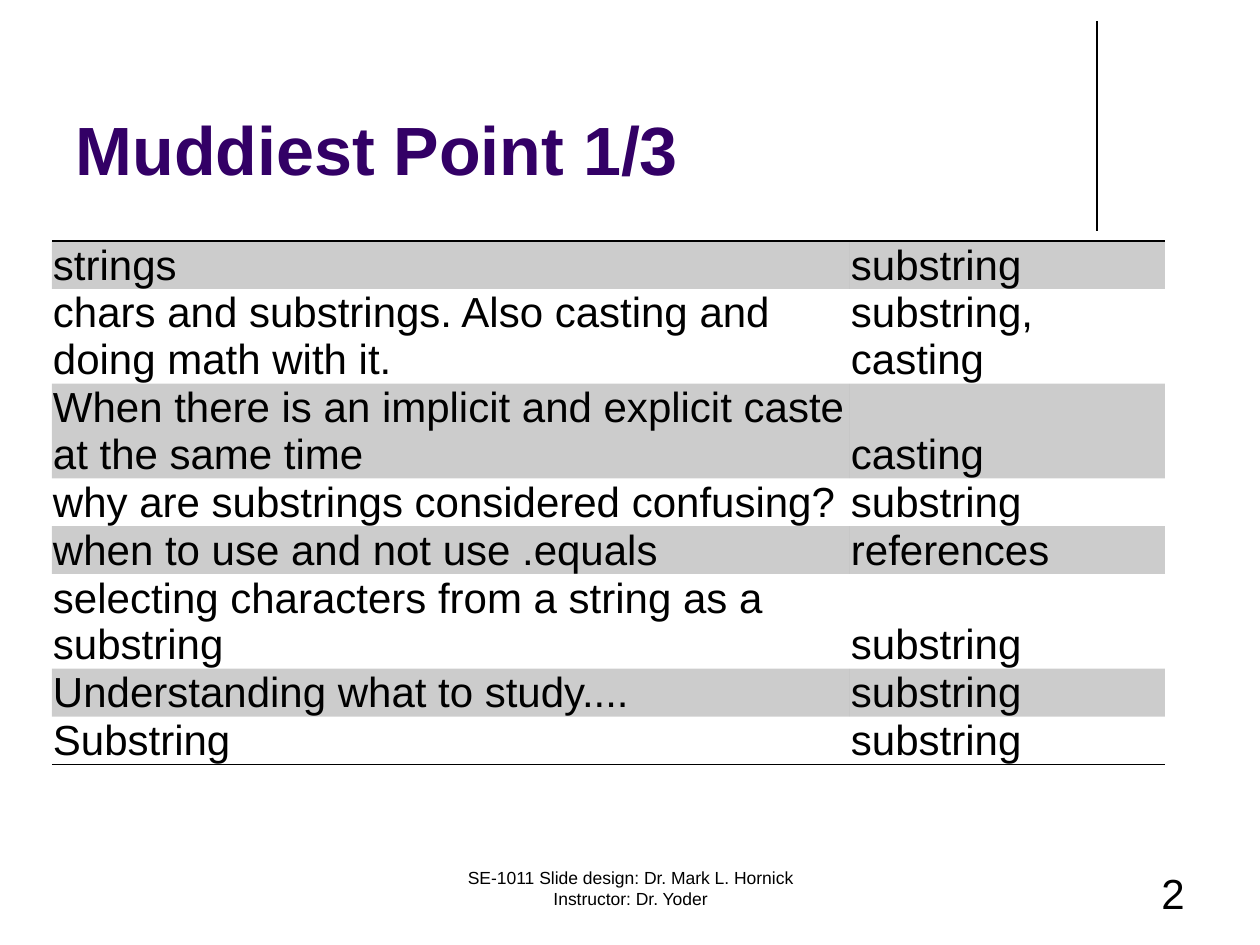
from dataclasses import dataclass

from lxml.etree import SubElement
from pptx import Presentation
from pptx.dml.color import RGBColor
from pptx.enum.shapes import MSO_CONNECTOR
from pptx.enum.text import MSO_ANCHOR, MSO_AUTO_SIZE, PP_ALIGN
from pptx.oxml import parse_xml
from pptx.oxml.ns import nsdecls, qn
from pptx.util import Emu, Pt

PX = 914400 // 126  # one pixel in EMU


@dataclass(frozen=True)
class Theme:
    font: str = "Arial"
    ink: str = "000000"
    title_ink: str = "330066"
    title_size: int = 39
    body_size: int = 24
    footer_size: int = 10
    band_alpha: int = 20
    rule_width: float = 0.75
    table_rule: int = 1


def px(*lengths):
    return [Emu(length * PX) for length in lengths]


class SlideBuilder:
    def __init__(self, slide, theme):
        self.slide = slide
        self.theme = theme

    def style(self, paragraph, size, color=None, bold=False, align=PP_ALIGN.LEFT):
        paragraph.alignment = align
        font = paragraph.font
        font.name, font.size, font.bold = self.theme.font, Pt(size), bold
        font.color.rgb = RGBColor.from_string(color or self.theme.ink)

    def title(self, text, left, top, width, height):
        title = self.slide.shapes.title
        title.left, title.top, title.width, title.height = px(left, top, width, height)
        frame = title.text_frame
        frame.text = text
        frame.auto_size = MSO_AUTO_SIZE.NONE
        frame.vertical_anchor = MSO_ANCHOR.BOTTOM
        self.style(frame.paragraphs[0], self.theme.title_size, self.theme.title_ink, bold=True)

    def text(self, text, left, top, width, height, size, align):
        frame = self.slide.shapes.add_textbox(*px(left, top, width, height)).text_frame
        frame.word_wrap = True
        frame.text = text
        self.style(frame.paragraphs[0], size, align=align)

    def rule(self, x1, y1, x2, y2):
        rule = self.slide.shapes.add_connector(MSO_CONNECTOR.STRAIGHT, *px(x1, y1, x2, y2))
        rule.line.color.rgb = RGBColor.from_string(self.theme.ink)
        rule.line.width = Pt(self.theme.rule_width)
        SubElement(rule._element.spPr, qn("a:effectLst"))

    def table(self, rows, left, top, column_widths, height, row_height):
        frame = self.slide.shapes.add_table(
            len(rows), len(column_widths), *px(left, top, sum(column_widths), height))
        table = frame.table
        table.first_row = table.horz_banding = False
        for column, width in zip(table.columns, px(*column_widths)):
            column.width = width
        for index, texts in enumerate(rows):
            table.rows[index].height = Emu(row_height * PX)
            ruled = {"T": index == 0, "B": index == len(rows) - 1}
            for cell, text in zip(table.rows[index].cells, texts):
                self.cell(cell, text, index % 2 == 0, ruled)
        frame.height = Emu(height * PX)

    def cell(self, cell, text, banded, ruled):
        cell.text = text
        cell.vertical_anchor = MSO_ANCHOR.BOTTOM
        cell.margin_left, cell.margin_right, cell.margin_top, cell.margin_bottom = px(1, 1, 1, 0)
        self.style(cell.text_frame.paragraphs[0], self.theme.body_size)
        properties = cell._tc.get_or_add_tcPr()
        if banded:
            cell.fill.solid()
            cell.fill.fore_color.rgb = RGBColor.from_string(self.theme.ink)
            color = properties.find(".//" + qn("a:srgbClr"))
            SubElement(color, qn("a:alpha"), val=str(self.theme.band_alpha * 1000))
        else:
            cell.fill.background()
        # Borders come before the fill in the cell properties
        line = f'<a:solidFill><a:srgbClr val="{self.theme.ink}"/></a:solidFill>'
        for position, side in enumerate("LRTB"):
            paint = line if ruled.get(side) else "<a:noFill/>"
            properties.insert(position, parse_xml(
                f'<a:ln{side} {nsdecls("a")} w="{Pt(self.theme.table_rule)}">{paint}</a:ln{side}>'))


MUDDIEST_POINTS = [
    ("strings", "substring"),
    ("chars and substrings. Also casting and doing math with it.", "substring, casting"),
    ("When there is an implicit and explicit caste at the same time", "casting"),
    ("why are substrings considered confusing?", "substring"),
    ("when to use and not use .equals", "references"),
    ("selecting characters from a string as a substring", "substring"),
    ("Understanding what to study....", "substring"),
    ("Substring", "substring"),
]


def main():
    theme = Theme()
    deck = Presentation()
    deck.slide_width, deck.slide_height = px(1260, 945)
    builder = SlideBuilder(deck.slides.add_slide(deck.slide_layouts[5]), theme)

    # Heading
    builder.rule(1097, 21, 1097, 231)
    builder.title("Muddiest Point 1/3", 63, 16, 1040, 179)

    # Student answers and their topics
    builder.table(MUDDIEST_POINTS, 52, 241, (798, 315), height=563, row_height=25)

    # Footer
    builder.text("SE-1011 Slide design: Dr. Mark L. Hornick Instructor: Dr. Yoder",
                 431, 861, 399, 63, theme.footer_size, PP_ALIGN.CENTER)
    builder.text("2", 903, 861, 294, 63, theme.body_size, PP_ALIGN.RIGHT)

    deck.save("out.pptx")


if __name__ == "__main__":
    main()
